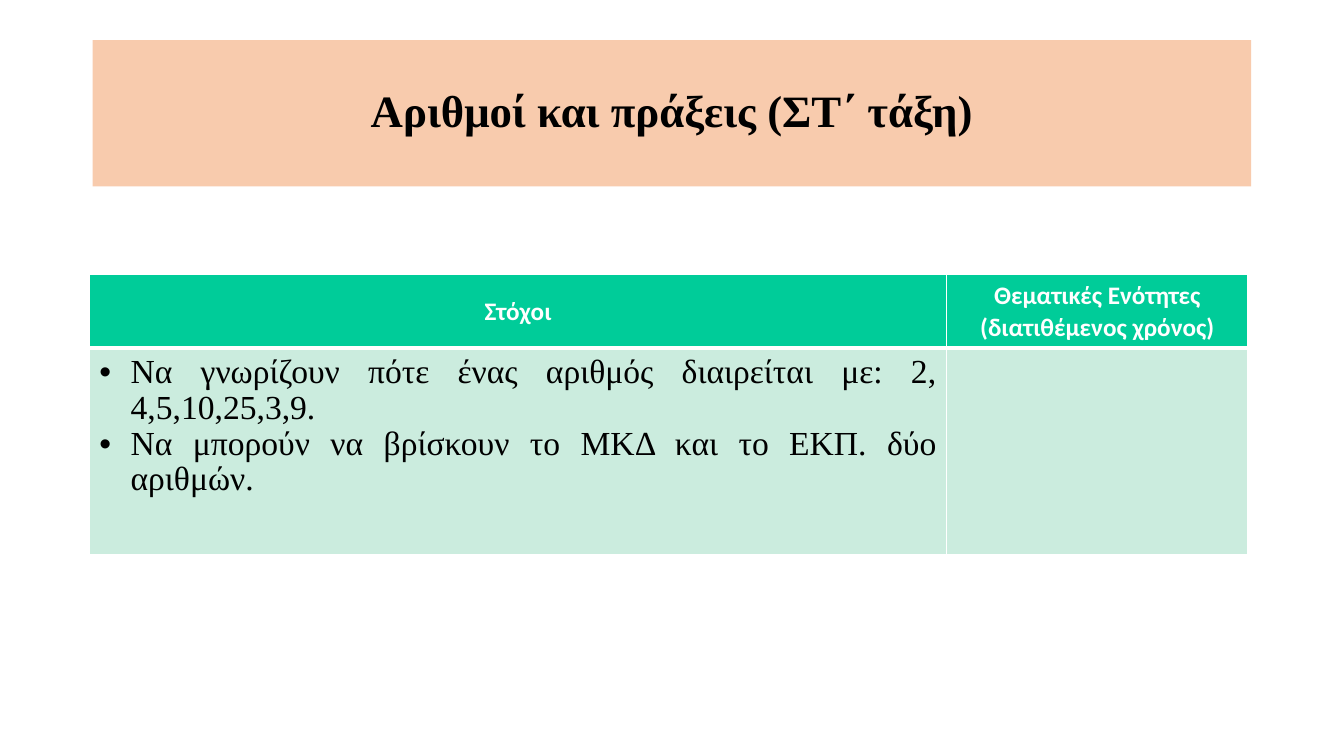
from pptx import Presentation
from pptx.dml.color import RGBColor
from pptx.enum.shapes import MSO_SHAPE
from pptx.enum.text import MSO_ANCHOR, PP_ALIGN
from pptx.oxml.ns import qn
from pptx.util import Inches, Pt
from lxml.etree import SubElement

SLIDE_WIDTH, SLIDE_HEIGHT = 13.34, 7.5
SERIF, SANS = "Times New Roman", "Calibri"
BLACK, WHITE = "000000", "FFFFFF"
PEACH, GREEN, PALE_GREEN = "F8CBAD", "00CC99", "CBECDE"
THIN, THICK = 0.91, 2.95

TITLE = "Αριθμοί και πράξεις (ΣΤ΄ τάξη)"
HEADINGS = ["Στόχοι", "Θεματικές Ενότητες\n(διατιθέμενος χρόνος)"]
GOALS = [
    "Να γνωρίζουν πότε ένας αριθμός διαιρείται με: 2, 4,5,10,25,3,9.",
    "Να μπορούν να βρίσκουν το ΜΚΔ και το ΕΚΠ. δύο αριθμών.",
]


# The grid has 100 columns and 100 rows
def columns(count):
    return Inches(SLIDE_WIDTH * count / 100)


def rows(count):
    return Inches(SLIDE_HEIGHT * count / 100)


def color(hex_string):
    return RGBColor.from_string(hex_string)


def write(frame, text, font, size, ink, align, spacing, bold=False):
    frame.text = text
    for paragraph in frame.paragraphs:
        paragraph.alignment = align
        paragraph.line_spacing = spacing
        for run in paragraph.runs:
            run.font.name = font
            run.font.size = Pt(size)
            run.font.bold = bold
            run.font.color.rgb = color(ink)


def add_bullets(frame, indent):
    for paragraph in frame.paragraphs:
        properties = paragraph._p.get_or_add_pPr()
        properties.set("marL", str(Inches(indent)))
        properties.set("indent", str(-Inches(indent)))
        SubElement(properties, qn("a:buFont"), typeface="Arial")
        SubElement(properties, qn("a:buChar"), char="•")


def style_cell(cell, fill, top, bottom):
    # Borders come before the fill in the cell properties
    properties = cell._tc.get_or_add_tcPr()
    for side, width in (("L", THIN), ("R", THIN), ("T", top), ("B", bottom)):
        border = SubElement(properties, qn(f"a:ln{side}"), w=str(Pt(width)))
        paint = SubElement(border, qn("a:solidFill"))
        SubElement(paint, qn("a:srgbClr"), val=WHITE)
    cell.fill.solid()
    cell.fill.fore_color.rgb = color(fill)


def add_title_band(slide):
    band = slide.shapes.add_shape(
        MSO_SHAPE.RECTANGLE, columns(6.9), rows(5.33), columns(86.2), rows(19.33))
    band.shadow.inherit = False
    band.fill.solid()
    band.fill.fore_color.rgb = color(PEACH)
    band.line.fill.background()
    band.text_frame.word_wrap = True
    band.text_frame.vertical_anchor = MSO_ANCHOR.MIDDLE
    write(band.text_frame, TITLE, SERIF, 32, BLACK, PP_ALIGN.CENTER, 0.9, bold=True)


def add_goals_table(slide):
    widths, heights = (63.8, 22.4), (9.73, 27.33)
    table = slide.shapes.add_table(
        2, 2, columns(6.65), rows(36.27),
        columns(sum(widths)), rows(sum(heights))).table
    for column, width in zip(table.columns, widths):
        column.width = columns(width)
    for row, height in zip(table.rows, heights):
        row.height = rows(height)

    # Heading row and the fills of both rows
    for index, heading in enumerate(HEADINGS):
        heading_cell = table.cell(0, index)
        style_cell(heading_cell, GREEN, THIN, THICK)
        style_cell(table.cell(1, index), PALE_GREEN, THICK, THIN)
        heading_cell.vertical_anchor = MSO_ANCHOR.MIDDLE
        write(heading_cell.text_frame, heading, SANS, 18, WHITE,
              PP_ALIGN.CENTER, 1.04, bold=True)

    # Bulleted goals
    goals_cell = table.cell(1, 0)
    goals_cell.margin_top = Inches(0.07)
    write(goals_cell.text_frame, "\n".join(GOALS), SERIF, 24, BLACK,
          PP_ALIGN.JUSTIFY, 0.96)
    add_bullets(goals_cell.text_frame, 0.31)


def main():
    presentation = Presentation()
    presentation.slide_width = Inches(SLIDE_WIDTH)
    presentation.slide_height = Inches(SLIDE_HEIGHT)
    slide = presentation.slides.add_slide(presentation.slide_layouts[6])
    add_title_band(slide)
    add_goals_table(slide)
    presentation.save("out.pptx")


if __name__ == "__main__":
    main()
